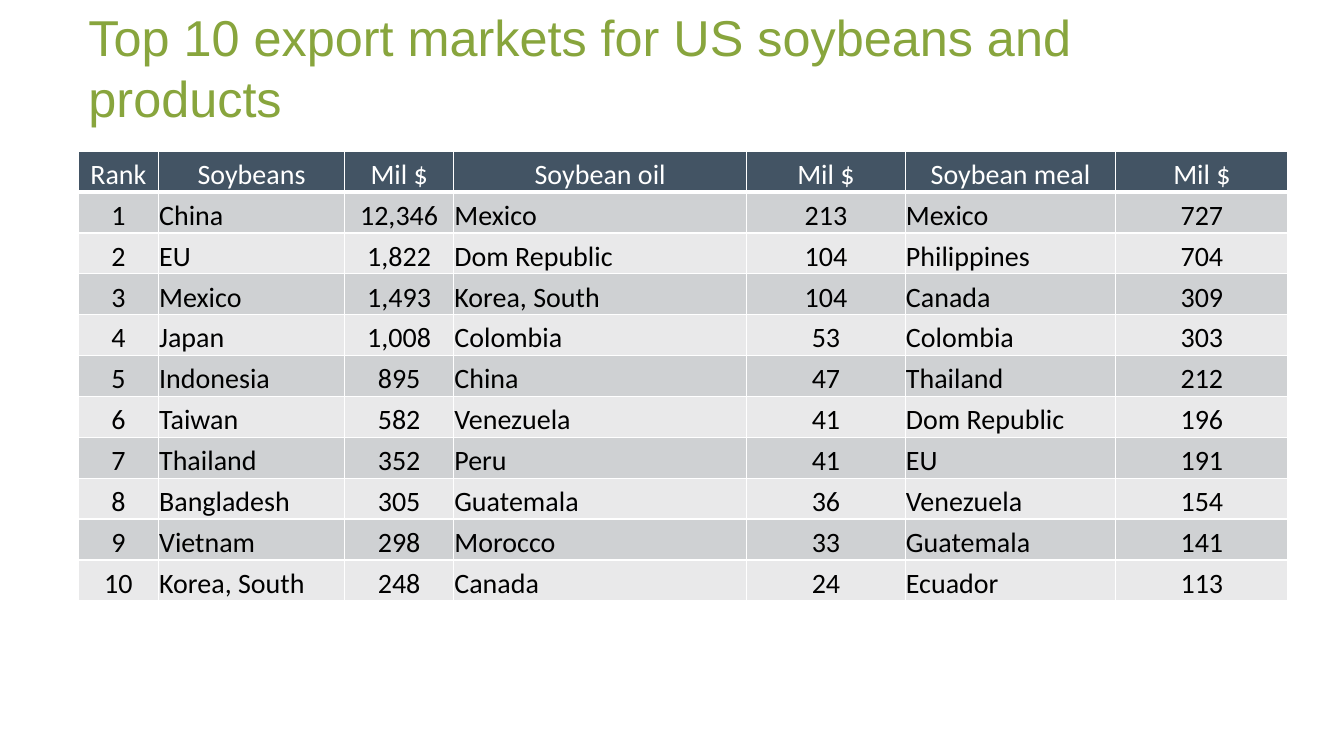
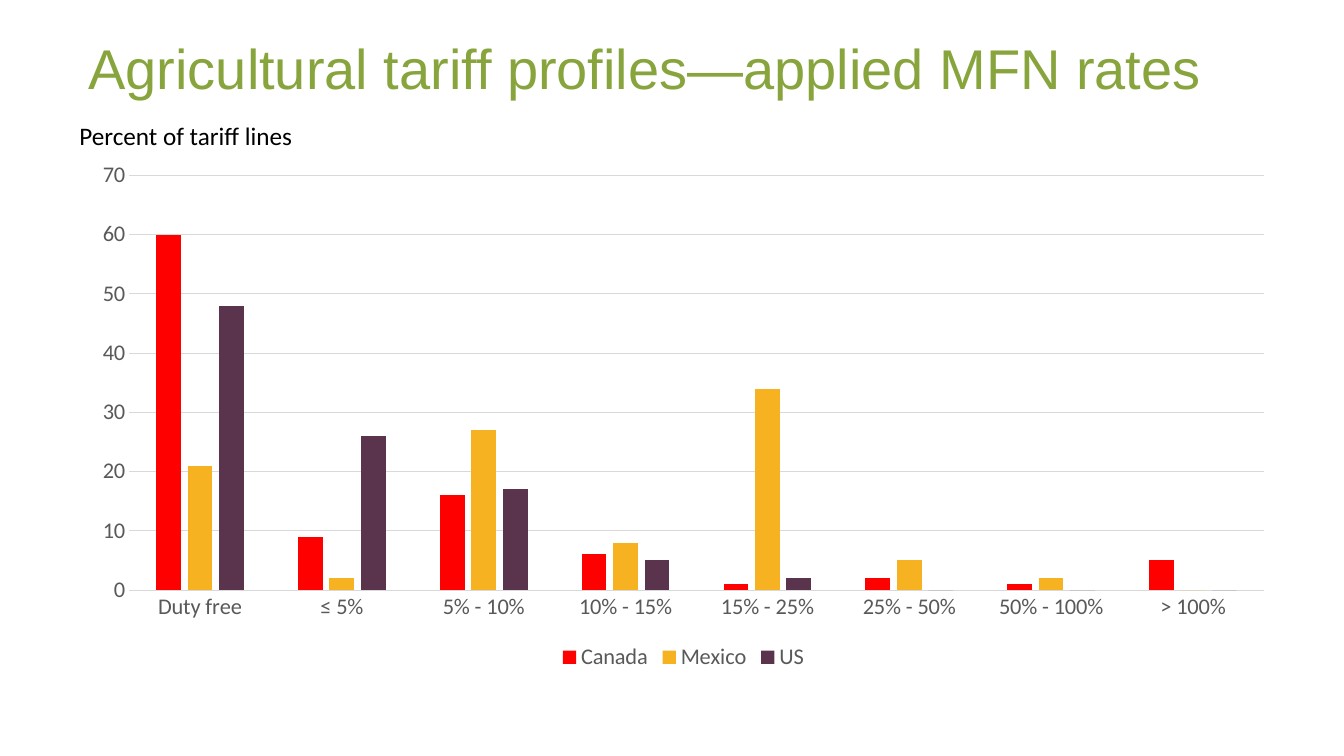
from dataclasses import dataclass

from lxml import etree
from pptx import Presentation
from pptx.chart.data import CategoryChartData
from pptx.dml.color import RGBColor
from pptx.enum.chart import XL_CHART_TYPE, XL_LEGEND_POSITION, XL_TICK_MARK
from pptx.enum.text import MSO_ANCHOR, PP_ALIGN
from pptx.oxml.ns import qn
from pptx.util import Cm, Pt

CLUSTERED = XL_CHART_TYPE.COLUMN_CLUSTERED
LEGEND_BOTTOM = XL_LEGEND_POSITION.BOTTOM
NO_TICK = XL_TICK_MARK.NONE
TOP, MIDDLE, BOTTOM = MSO_ANCHOR.TOP, MSO_ANCHOR.MIDDLE, MSO_ANCHOR.BOTTOM
LEFT, CENTER = PP_ALIGN.LEFT, PP_ALIGN.CENTER


@dataclass(frozen=True)
class Theme:
    title_font: str = "Arial"
    body_font: str = "Calibri"
    title: str = "88A53D"
    text: str = "000000"
    white: str = "FFFFFF"
    header: str = "435464"
    bands: tuple = ("CFD1D3", "E9E9EA")
    chart_text: str = "595959"
    grid: str = "D9D9D9"
    series: tuple = ("FF0000", "F6B221", "5A344D")
    long_title_size: int = 36
    title_size: int = 40
    table_size: int = 20
    caption_size: int = 18
    chart_size: int = 16
    rule: float = 1
    header_rule: float = 3
    grid_rule: float = 0.75


THEME = Theme()

TITLE_BOX = (1.98, 0.48, 30.48, 2.41)
TABLE_BOX = (1.98, 3.81, 30.48, 11.33)
CHART_BOX = (1.98, 3.81, 30.48, 13.21)
CAPTION_BOX = (1.75, 2.9, 5.97, 1.02)

COLUMN_WIDTHS = (2.01, 4.7, 2.74, 7.39, 3.99, 5.31, 4.34)
NAME_COLUMNS = (1, 3, 5)
MARKETS = (
    ("Rank", "Soybeans", "Mil $", "Soybean oil", "Mil $", "Soybean meal", "Mil $"),
    ("1", "China", "12,346", "Mexico", "213", "Mexico", "727"),
    ("2", "EU", "1,822", "Dom Republic", "104", "Philippines", "704"),
    ("3", "Mexico", "1,493", "Korea, South", "104", "Canada", "309"),
    ("4", "Japan", "1,008", "Colombia", "53", "Colombia", "303"),
    ("5", "Indonesia", "895", "China", "47", "Thailand", "212"),
    ("6", "Taiwan", "582", "Venezuela", "41", "Dom Republic", "196"),
    ("7", "Thailand", "352", "Peru", "41", "EU", "191"),
    ("8", "Bangladesh", "305", "Guatemala", "36", "Venezuela", "154"),
    ("9", "Vietnam", "298", "Morocco", "33", "Guatemala", "141"),
    ("10", "Korea, South", "248", "Canada", "24", "Ecuador", "113"),
)

TARIFF_BANDS = ("Duty free", "≤ 5%", "5% - 10%", "10% - 15%", "15% - 25%",
                "25% - 50%", "50% - 100%", "> 100%")
TARIFF_SHARES = {
    "Canada": (60, 9, 16, 6, 1, 2, 1, 5),
    "Mexico": (21, 2, 27, 8, 34, 5, 2, 0),
    "US": (48, 26, 17, 5, 2, 0, 0, 0),
}


def color(value):
    return RGBColor.from_string(value)


def set_font(font, name, size, value):
    font.name = name
    font.size = Pt(size)
    font.bold = False
    font.color.rgb = color(value)


def add_run(paragraph, text, name, size, value):
    run = paragraph.add_run()
    run.text = text
    set_font(run.font, name, size, value)


def add_text(slide, box, text, name, size, value, anchor, wrap):
    shape = slide.shapes.add_textbox(*map(Cm, box))
    frame = shape.text_frame
    frame.word_wrap = wrap
    frame.vertical_anchor = anchor
    add_run(frame.paragraphs[0], text, name, size, value)


def add_title(slide, text, size):
    add_text(slide, TITLE_BOX, text, THEME.title_font, size, THEME.title, MIDDLE, True)


def set_borders(cell, top, bottom):
    properties = cell._tc.get_or_add_tcPr()
    widths = {"a:lnL": THEME.rule, "a:lnR": THEME.rule, "a:lnT": top, "a:lnB": bottom}
    for tag, width in widths.items():
        line = etree.SubElement(properties, qn(tag), w=str(Pt(width)))
        fill = etree.SubElement(line, qn("a:solidFill"))
        etree.SubElement(fill, qn("a:srgbClr"), val=THEME.white)


def fill_cell(cell, text, row, column):
    is_header = row == 0
    set_borders(cell,
                THEME.header_rule if row == 1 else THEME.rule,
                THEME.header_rule if is_header else THEME.rule)
    cell.fill.solid()
    cell.fill.fore_color.rgb = color(THEME.header if is_header else THEME.bands[(row - 1) % 2])
    cell.margin_left = cell.margin_right = cell.margin_top = Cm(0.02)
    cell.margin_bottom = 0
    cell.vertical_anchor = BOTTOM
    paragraph = cell.text_frame.paragraphs[0]
    paragraph.alignment = LEFT if column in NAME_COLUMNS and not is_header else CENTER
    add_run(paragraph, text, THEME.body_font, THEME.table_size,
            THEME.white if is_header else THEME.text)


def add_market_table(slide, box):
    left, top, width, height = map(Cm, box)
    table = slide.shapes.add_table(len(MARKETS), len(COLUMN_WIDTHS),
                                   left, top, width, height).table
    for column, share in zip(table.columns, COLUMN_WIDTHS):
        column.width = int(width * share / sum(COLUMN_WIDTHS))
    for row, texts in enumerate(MARKETS):
        for column, text in enumerate(texts):
            fill_cell(table.cell(row, column), text, row, column)


def style_axis(axis):
    axis.major_tick_mark = axis.minor_tick_mark = NO_TICK
    set_font(axis.tick_labels.font, THEME.body_font, THEME.chart_size, THEME.chart_text)


def style_line(line):
    line.color.rgb = color(THEME.grid)
    line.width = Pt(THEME.grid_rule)


def add_tariff_chart(slide, box):
    data = CategoryChartData(number_format="0")
    data.categories = TARIFF_BANDS
    for name, shares in TARIFF_SHARES.items():
        data.add_series(name, shares)
    chart = slide.shapes.add_chart(CLUSTERED, *map(Cm, box), data).chart
    set_font(chart.font, THEME.body_font, THEME.chart_size, THEME.text)
    chart.has_title = False
    chart.has_legend = True
    chart.legend.position = LEGEND_BOTTOM
    chart.legend.include_in_layout = False
    set_font(chart.legend.font, THEME.body_font, THEME.chart_size, THEME.chart_text)

    plot = chart.plots[0]
    plot.gap_width = 219
    plot.overlap = -27
    plot.vary_by_categories = False
    for series, value in zip(plot.series, THEME.series):
        series.invert_if_negative = False
        series.format.fill.solid()
        series.format.fill.fore_color.rgb = color(value)

    style_axis(chart.category_axis)
    style_line(chart.category_axis.format.line)
    value_axis = chart.value_axis
    style_axis(value_axis)
    value_axis.minimum_scale, value_axis.maximum_scale = 0, 70
    value_axis.major_unit = 10
    value_axis.format.line.fill.background()
    value_axis.has_major_gridlines = True
    style_line(value_axis.major_gridlines.format.line)


def build_markets_slide(slide):
    add_title(slide, "Top 10 export markets for US soybeans and products", THEME.long_title_size)
    add_market_table(slide, TABLE_BOX)


def build_tariffs_slide(slide):
    add_title(slide, "Agricultural tariff profiles—applied MFN rates", THEME.title_size)
    add_tariff_chart(slide, CHART_BOX)
    add_text(slide, CAPTION_BOX, "Percent of tariff lines", THEME.body_font,
             THEME.caption_size, THEME.text, TOP, False)


def main():
    presentation = Presentation()
    presentation.slide_width = Cm(33.87)
    presentation.slide_height = Cm(19.05)
    blank = presentation.slide_layouts[6]
    for build in (build_markets_slide, build_tariffs_slide):
        build(presentation.slides.add_slide(blank))
    presentation.save("out.pptx")


if __name__ == "__main__":
    main()
